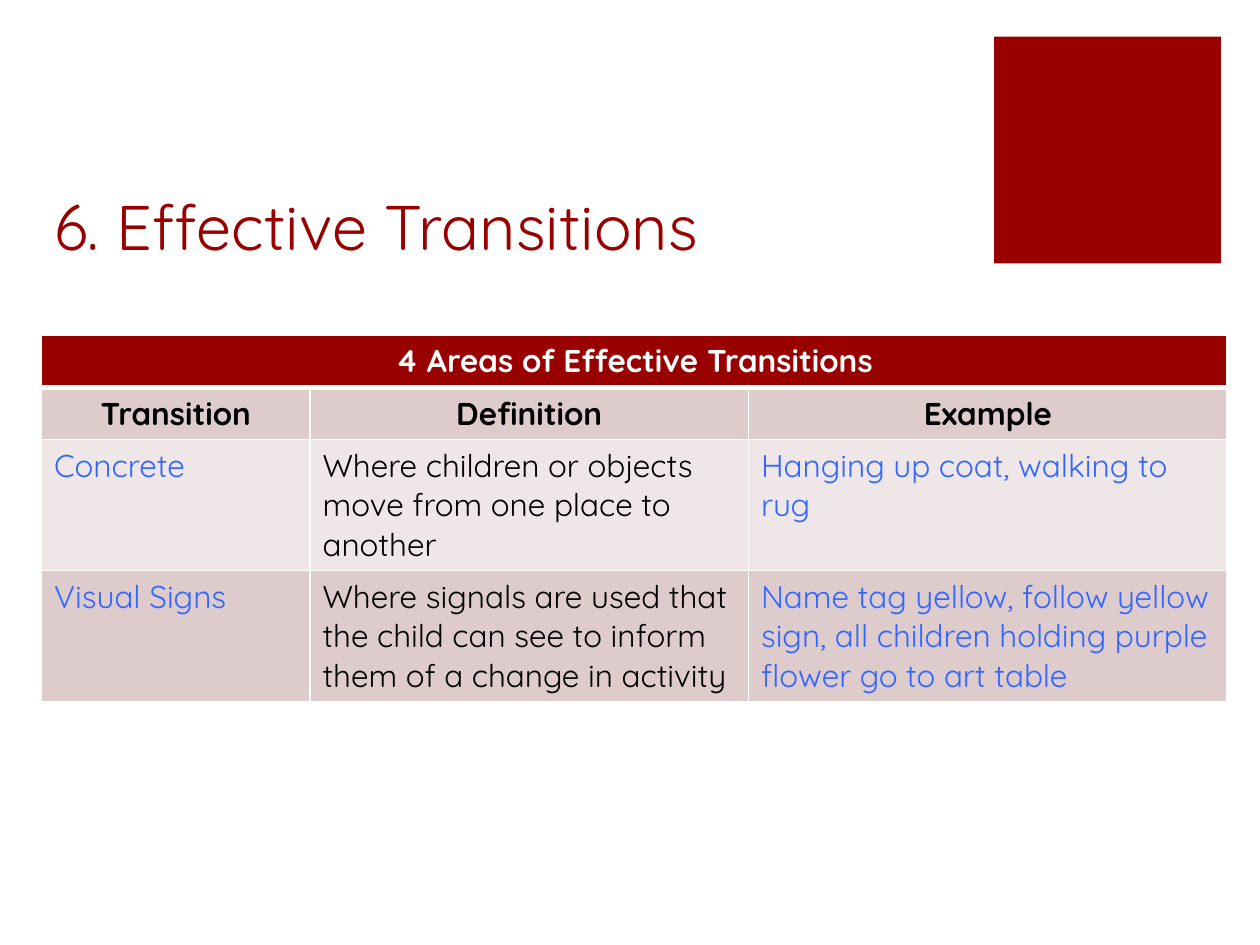
from lxml.etree import SubElement
from pptx import Presentation
from pptx.dml.color import RGBColor
from pptx.enum.shapes import MSO_SHAPE
from pptx.enum.text import MSO_ANCHOR, MSO_AUTO_SIZE, PP_ALIGN
from pptx.oxml.ns import qn
from pptx.util import Inches, Pt

FONT = "Quicksand"
RED = RGBColor(0x99, 0x00, 0x00)
WHITE = RGBColor(0xFF, 0xFF, 0xFF)
BLACK = RGBColor(0x00, 0x00, 0x00)
BLUE = RGBColor(0x33, 0x66, 0xFF)
DARK_BAND = RGBColor(0xDE, 0xCC, 0xCC)
LIGHT_BAND = RGBColor(0xEF, 0xE7, 0xE7)

COL_WIDTHS = (2.13, 3.48, 3.8)
ROW_HEIGHT = 0.41
ROWS = (
    ("4 Areas of Effective Transitions", "", ""),
    ("Transition", "Definition", "Example"),
    ("Concrete", "Where children or objects move from one place to another",
     "Hanging up coat, walking to rug"),
    ("Visual Signs",
     "Where signals are used that the child can see to inform them of a change in activity",
     "Name tag yellow, follow yellow sign, all children holding purple flower go to art table"),
)


def write_text(tf, text, align, color, **font):
    """Fill the first paragraph of a text frame with one formatted run."""
    p = tf.paragraphs[0]
    p.alignment = align
    r = p.add_run()
    r.text = text
    r.font.color.rgb = color
    for name, value in {"name": FONT, **font}.items():
        setattr(r.font, name, value)


def add_title(s, text):
    """Place and format the title placeholder."""
    sp = s.shapes.title
    box = {"left": 0.33, "top": 0.89, "width": 7.12, "height": 1.25}
    for name, value in box.items():
        setattr(sp, name, Inches(value))
    tf = sp.text_frame
    frame = {"word_wrap": True, "auto_size": MSO_AUTO_SIZE.NONE,
             "vertical_anchor": MSO_ANCHOR.BOTTOM}
    for name, value in frame.items():
        setattr(tf, name, value)
    write_text(tf, text, PP_ALIGN.LEFT, RED, size=Pt(36), bold=False)


def add_square(s):
    """Add the red corner square."""
    side = Inches(1.8)
    sp = s.shapes.add_shape(MSO_SHAPE.RECTANGLE, Inches(7.89), Inches(0.29), side, side)
    sp.shadow.inherit = False
    sp.fill.solid()
    sp.fill.fore_color.rgb = RED
    sp.line.fill.background()


def set_borders(cell, bottom, top):
    """Draw white borders around a cell, with widths in points."""
    tc_pr = cell._tc.get_or_add_tcPr()
    widths = {"a:lnL": 1, "a:lnR": 1, "a:lnT": top, "a:lnB": bottom}
    for i, (tag, width) in enumerate(widths.items()):
        ln = tc_pr.makeelement(qn(tag), {"w": str(Pt(width))})
        fill = SubElement(ln, qn("a:solidFill"))
        SubElement(fill, qn("a:srgbClr"), val=str(WHITE))
        tc_pr.insert(i, ln)


def cell_style(row, col):
    """Return fill, text colour, boldness and alignment for a cell."""
    if row == 0:
        return RED, WHITE, True, PP_ALIGN.CENTER
    if row == 1:
        return DARK_BAND, BLACK, True, PP_ALIGN.CENTER
    band = DARK_BAND if row % 2 else LIGHT_BAND
    return band, BLACK if col == 1 else BLUE, False, PP_ALIGN.LEFT


def add_transitions_table(s):
    """Add the banded table of transitions."""
    frame = s.shapes.add_table(
        len(ROWS), len(COL_WIDTHS), Inches(0.33), Inches(2.66),
        Inches(sum(COL_WIDTHS)), Inches(ROW_HEIGHT * len(ROWS)))
    table = frame.table
    for column, width in zip(table.columns, COL_WIDTHS):
        column.width = Inches(width)
    for i, texts in enumerate(ROWS):
        table.rows[i].height = Inches(ROW_HEIGHT)
        for j, text in enumerate(texts):
            cell = table.cell(i, j)
            fill, color, bold, align = cell_style(i, j)
            cell.fill.solid()
            cell.fill.fore_color.rgb = fill
            set_borders(cell, bottom=3 if i == 0 else 1, top=3 if i == 1 else 1)
            if text:
                write_text(cell.text_frame, text, align, color, size=Pt(18), bold=bold)
    table.cell(0, 0).merge(table.cell(0, len(COL_WIDTHS) - 1))


def main():
    """Build and save the slide."""
    prs = Presentation()
    prs.slide_width, prs.slide_height = Inches(10), Inches(7.5)
    s = prs.slides.add_slide(prs.slide_layouts[5])
    add_square(s)
    add_title(s, "6. Effective Transitions")
    add_transitions_table(s)
    prs.save("out.pptx")


if __name__ == "__main__":
    main()
